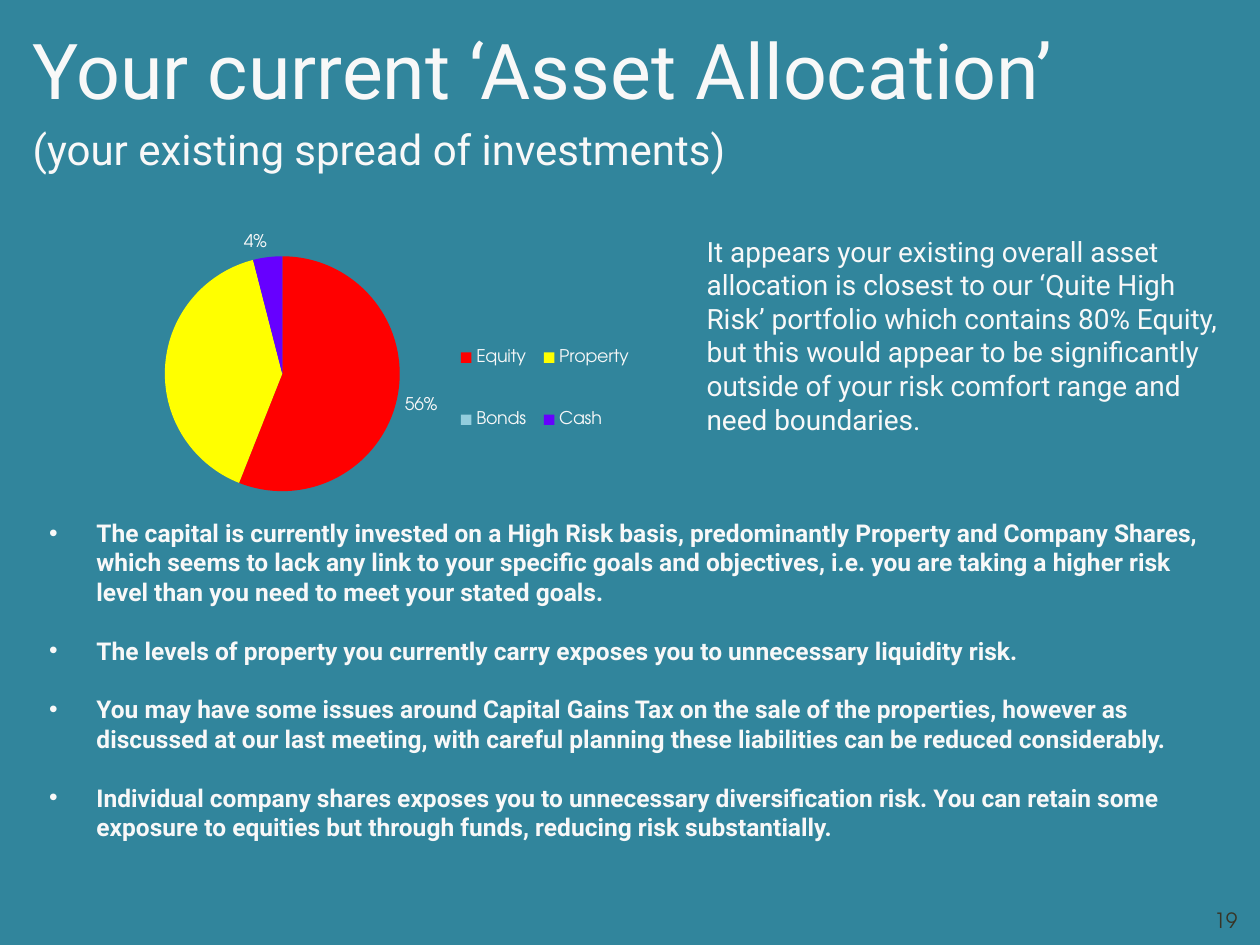
import pptx
import pptx.chart.data
import pptx.dml.color
import pptx.enum.chart
import pptx.enum.text
import pptx.oxml
import pptx.oxml.ns
import pptx.util

COLORS = {
    "background": "31859C",
    "text": "F8F8F8",
    "number": "383425",
    "Equity": "FF0000",
    "Property": "FFFF00",
    "Bonds": "93CDDD",
    "Cash": "6600FF",
}
SHARES = {"Equity": 0.56, "Property": 0.4, "Bonds": 0, "Cash": 0.04}
LABELLED = ("Equity", "Cash")
BODY_FONT = "Roboto"
CHART_FONT = "TeX Gyre Adventor"
WIDTH, HEIGHT = 10, 7.5

SUMMARY = (
    "It appears your existing overall asset allocation is closest to our "
    "‘Quite High Risk’ portfolio which contains 80% Equity, but this would "
    "appear to be significantly outside of your risk comfort range and need "
    "boundaries."
)
FINDINGS = [
    "The capital is currently invested on a High Risk basis, predominantly "
    "Property and Company Shares, which seems to lack any link to your specific "
    "goals and objectives, i.e. you are taking a higher risk level than you need "
    "to meet your stated goals.",
    "The levels of property you currently carry exposes you to unnecessary "
    "liquidity risk.",
    "You may have some issues around Capital Gains Tax on the sale of the "
    "properties, however as discussed at our last meeting, with careful planning "
    "these liabilities can be reduced considerably.",
    "Individual company shares exposes you to unnecessary diversification risk. "
    "You can retain some exposure to equities but through funds, reducing risk "
    "substantially.",
]


def color(name):
    """Return the named colour."""
    return pptx.dml.color.RGBColor.from_string(COLORS[name])


def place(box, left, top, width, height):
    """Move a text shape and let its text wrap from the top."""
    box.left, box.top = pptx.util.Inches(left), pptx.util.Inches(top)
    box.width, box.height = pptx.util.Inches(width), pptx.util.Inches(height)
    frame = box.text_frame
    frame.word_wrap = True
    frame.auto_size = pptx.enum.text.MSO_AUTO_SIZE.NONE
    frame.vertical_anchor = pptx.enum.text.MSO_ANCHOR.TOP
    return frame


def write(para, text, size, font=BODY_FONT, fill="text", bold=False,
          align="LEFT", before=0, after=0):
    """Write one formatted paragraph."""
    para.alignment = getattr(pptx.enum.text.PP_ALIGN, align)
    para.space_before = pptx.util.Pt(before)
    para.space_after = pptx.util.Pt(after)
    span = para.add_run()
    span.text = text
    span.font.name = font
    span.font.size = pptx.util.Pt(size)
    span.font.bold = bold
    span.font.color.rgb = color(fill)


def add_text(page, area, text, size, **style):
    """Add a text box with one paragraph."""
    box = page.shapes.add_textbox(0, 0, 0, 0)
    frame = place(box, *area)
    write(frame.paragraphs[0], text, size, **style)
    return frame


def layout(left, top, width, height, target=""):
    """Build a manual chart layout from shares of the chart's size."""
    lengths = {"x": left, "y": top, "w": width, "h": height}
    modes = '<c:xMode val="edge"/><c:yMode val="edge"/>'
    sizes = "".join(f'<c:{key} val="{value}"/>' for key, value in lengths.items())
    return pptx.oxml.parse_xml(
        f'<c:layout {pptx.oxml.ns.nsdecls("c")}><c:manualLayout>'
        f"{target}{modes}{sizes}</c:manualLayout></c:layout>"
    )


def add_pie(page, left, top, width, height):
    """Add the allocation pie with its legend and labels."""
    data = pptx.chart.data.CategoryChartData(number_format="0%")
    data.categories = list(SHARES)
    data.add_series("Series 1", list(SHARES.values()))
    area = [pptx.util.Inches(length) for length in (left, top, width, height)]
    kind = pptx.enum.chart.XL_CHART_TYPE.PIE
    chart = page.shapes.add_chart(kind, *area, data).chart
    chart.has_title = False
    chart.font.name = CHART_FONT
    chart.font.size = pptx.util.Pt(10)
    chart.font.color.rgb = color("text")

    plot = chart.plots[0]
    plot.vary_by_categories = True
    series = plot.series[0]
    labels = series.data_labels
    labels.show_value = True
    labels.show_percentage = False
    labels.number_format = "0%"
    labels.number_format_is_linked = False
    labels.position = pptx.enum.chart.XL_LABEL_POSITION.OUTSIDE_END
    hidden = 0
    for index, name in enumerate(SHARES):
        fill = series.points[index].format.fill
        fill.solid()
        fill.fore_color.rgb = color(name)
        if name not in LABELLED:
            label = pptx.oxml.parse_xml(
                f'<c:dLbl {pptx.oxml.ns.nsdecls("c")}>'
                f'<c:idx val="{index}"/><c:delete val="1"/></c:dLbl>'
            )
            labels._element.insert(hidden, label)
            hidden += 1

    chart.has_legend = True
    legend = chart.legend
    legend.position = pptx.enum.chart.XL_LEGEND_POSITION.RIGHT
    legend.include_in_layout = False
    set_layout(legend._element, layout(0.71, 0.3, 0.23, 0.4), 1)
    inner = '<c:layoutTarget val="inner"/>'
    plot_area = chart._chartSpace.chart.plotArea
    set_layout(plot_area, layout(0.23, 0.19, 0.56, 0.55, inner), 0)


def set_layout(element, new_layout, position):
    """Replace the layout of a chart part."""
    for old_layout in element.findall(pptx.oxml.ns.qn("c:layout")):
        element.remove(old_layout)
    element.insert(position, new_layout)


def main():
    """Build and save the slide."""
    deck = pptx.Presentation()
    deck.slide_width = pptx.util.Inches(WIDTH)
    deck.slide_height = pptx.util.Inches(HEIGHT)
    page = deck.slides.add_slide(deck.slide_layouts[1])
    page.background.fill.solid()
    page.background.fill.fore_color.rgb = color("background")

    title = place(page.shapes.title, 0.16, 0.13, 9.57, 0.47)
    write(title.paragraphs[0], "Your current ‘Asset Allocation’", 44, before=8.8)
    write(title.add_paragraph(), "(your existing spread of investments)", 24,
          before=4.8)

    number = add_text(page, (7.59, 7.1, 2.33, 0.4), "19", 12, font=CHART_FONT,
                      fill="number", align="RIGHT")
    number.vertical_anchor = pptx.enum.text.MSO_ANCHOR.MIDDLE
    add_text(page, (5.51, 1.81, 4.37, 1.72), SUMMARY, 16)

    body = place(page.placeholders[1], 0.29, 4.06, 9.51, 2.96)
    for index, finding in enumerate(FINDINGS):
        para = body.add_paragraph() if index else body.paragraphs[0]
        write(para, finding, 14, bold=True, after=16.8)

    add_pie(page, -1.13, 1.39, 6.61, 3.39)
    deck.save("out.pptx")


if __name__ == "__main__":
    main()
